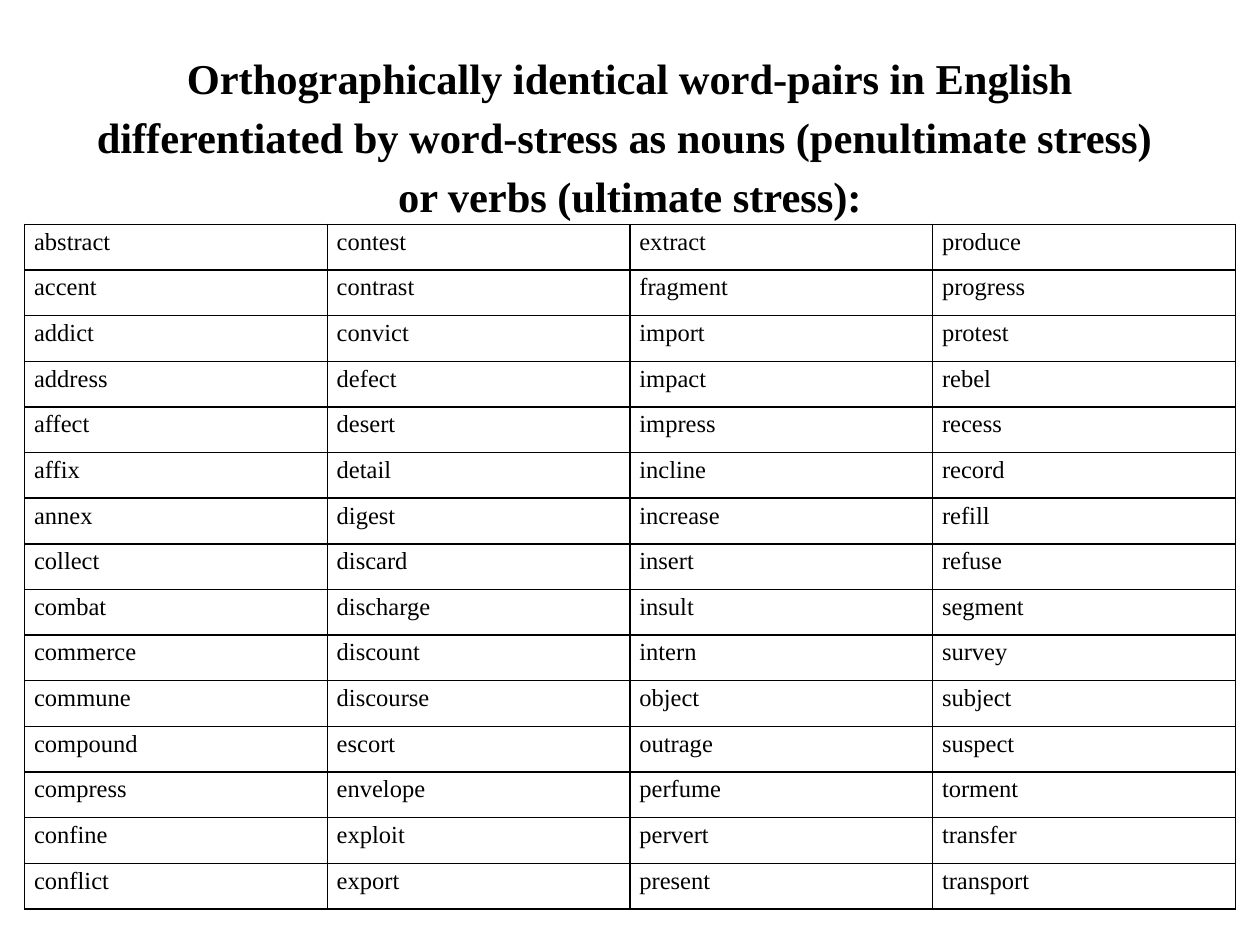
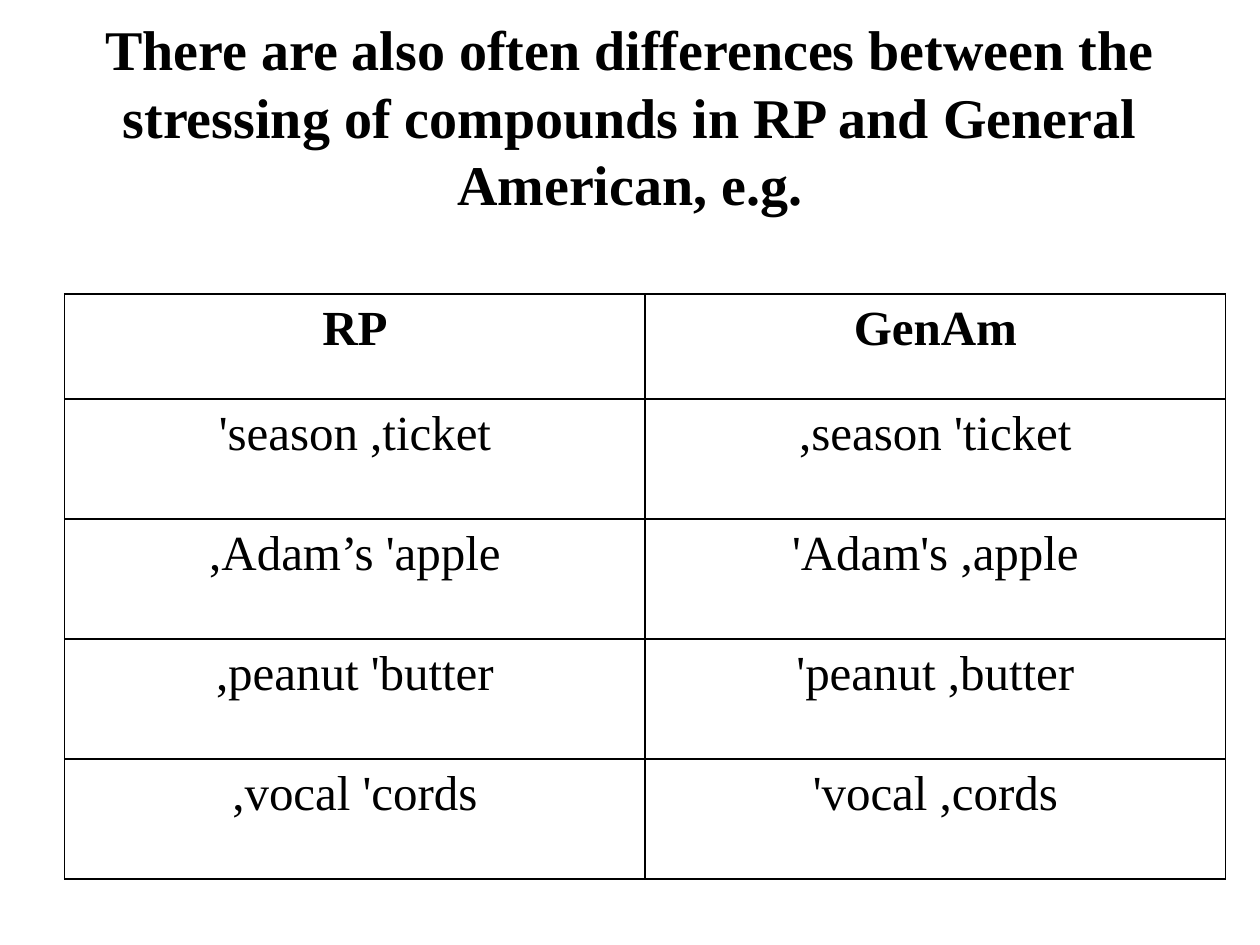
from lxml import etree
from pptx import Presentation
from pptx.dml.color import RGBColor
from pptx.enum import text
from pptx.oxml import ns
from pptx.util import Pt

HUES = {"ink": "000000", "page": "FFFFFF"}
FONT = "Times New Roman"
ALIGN = text.PP_ALIGN


def write(para, words, size, bold, align, space):
    para.alignment = align
    para.line_spacing = space
    for n, part in enumerate(words.split("\n")):
        if n:
            para.add_line_break()
        run = para.add_run()
        run.text = part
        run.font.name = FONT
        run.font.size = Pt(size)
        run.font.bold = bold
        run.font.color.rgb = RGBColor.from_string(HUES["ink"])


def rule(cell):
    props = cell._tc.get_or_add_tcPr()
    for side in ("lnL", "lnR", "lnT", "lnB"):
        line = etree.SubElement(props, ns.qn("a:" + side), w=str(Pt(1)))
        fill = etree.SubElement(line, ns.qn("a:solidFill"))
        etree.SubElement(fill, ns.qn("a:srgbClr"), val=HUES["ink"])


# Words
verbs = """
abstract contest extract produce
accent contrast fragment progress
addict convict import protest
address defect impact rebel
affect desert impress recess
affix detail incline record
annex digest increase refill
collect discard insert refuse
combat discharge insult segment
commerce discount intern survey
commune discourse object subject
compound escort outrage suspect
compress envelope perfume torment
confine exploit pervert transfer
conflict export present transport
"""
pairs = [
    ("RP", "GenAm"),
    ("'season ,ticket", ",season 'ticket"),
    (",Adam’s 'apple", "'Adam's ,apple"),
    (",peanut 'butter", "'peanut ,butter"),
    (",vocal 'cords", "'vocal ,cords"),
]

# What differs from slide to slide
pages = [
    dict(title="Orthographically identical word-pairs in English differentiated by "
               "word-stress as nouns (penultimate stress) \nor verbs (ultimate stress):",
         size=24.3, space=1.15, inset=22,
         rows=[line.split() for line in verbs.strip().splitlines()],
         left=14.1, top=128.2, width=691.8, head=26.1, row=26.1,
         body=14, align=ALIGN.JUSTIFY, bold=False),
    dict(title="There are also often differences between the stressing of compounds "
               "in RP and General American, e.g.",
         size=32, space=1.0, inset=2.7,
         rows=pairs,
         left=37, top=168, width=663.4, head=60, row=68.57,
         body=28, align=ALIGN.CENTER, bold=True),
]

deck = Presentation()
deck.slide_width, deck.slide_height = Pt(720), Pt(540)

for page in pages:
    slide = deck.slides.add_slide(deck.slide_layouts[6])
    back = slide.background.fill
    back.solid()
    back.fore_color.rgb = RGBColor.from_string(HUES["page"])

    # Title
    frame = slide.shapes.add_textbox(Pt(36), Pt(21.6), Pt(648), Pt(90)).text_frame
    frame.word_wrap = True
    frame.vertical_anchor = text.MSO_ANCHOR.MIDDLE
    frame.margin_top, frame.margin_bottom = Pt(page["inset"]), Pt(3.6)
    write(frame.paragraphs[0], page["title"], page["size"], True,
          ALIGN.CENTER, page["space"])

    # Table
    rows = page["rows"]
    cols = len(rows[0])
    high = page["head"] + page["row"] * (len(rows) - 1)
    grid = slide.shapes.add_table(len(rows), cols, Pt(page["left"]), Pt(page["top"]),
                                  Pt(page["width"]), Pt(high)).table
    grid.first_row = grid.horz_banding = False
    for col in grid.columns:
        col.width = Pt(page["width"] / cols)
    for r, words in enumerate(rows):
        grid.rows[r].height = Pt(page["row"] if r else page["head"])
        for c, word in enumerate(words):
            cell = grid.cell(r, c)
            cell.margin_left = cell.margin_right = Pt(5.4)
            cell.margin_top = cell.margin_bottom = 0
            rule(cell)
            cell.fill.background()
            write(cell.text_frame.paragraphs[0], word, page["body"],
                  page["bold"] and r == 0, page["align"], 1.15)

deck.save("out.pptx")
